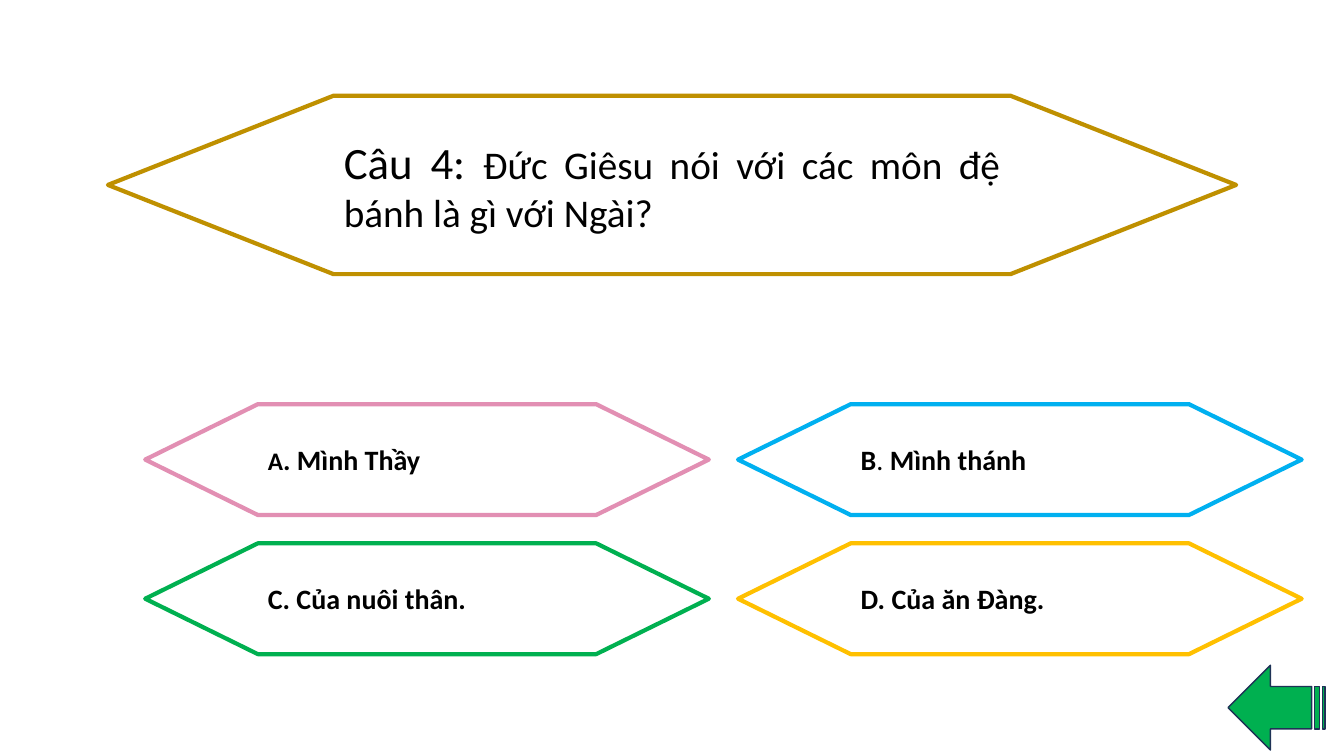
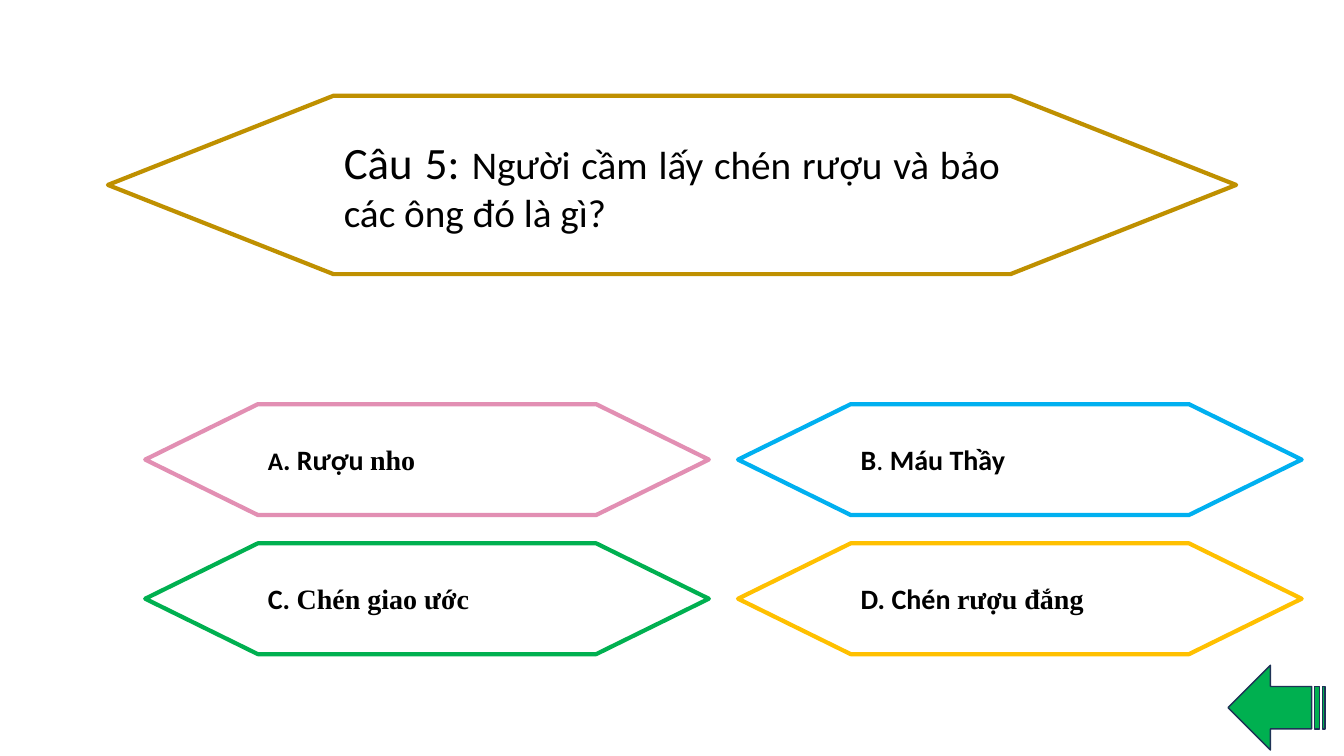
"""Build two quiz slides with a question, four answers and a back arrow."""
from pptx import Presentation
from pptx.dml.color import RGBColor
from pptx.enum import shapes, text
from pptx.util import Inches, Pt

SANS, SERIF = "Calibri", "Times New Roman"
BLACK, WHITE, GREEN, NAVY, BRONZE = "000000", "FFFFFF", "00B050", "1E3256", "BF9000"
ANSWER_COLOURS = ["E28FB3", "00B0F0", GREEN, "FFC000"]
HEXAGON = shapes.MSO_SHAPE.FLOWCHART_PREPARATION

QUIZ = [
    ("Câu 4: ", "Đức Giêsu nói với các môn đệ bánh là gì với Ngài?", [
        [("A", 18, True, SANS), (". Mình Thầy", 20, True, SANS)],
        [("B", 20, True, SANS), (". ", 20, False, SANS), ("Mình thánh", 20, True, SANS)],
        [("C. Của nuôi thân.", 20, True, SANS)],
        [("D. Của ăn Đàng.", 20, True, SANS)],
    ]),
    ("Câu 5: ", "Người cầm lấy chén rượu và bảo các ông đó là gì?", [
        [("A", 18, True, SANS), (". Rượu ", 20, True, SANS), ("nho", 20, True, SERIF)],
        [("B", 20, True, SANS), (". ", 20, False, SANS), ("Máu Thầy", 20, True, SANS)],
        [("C. ", 20, True, SANS), ("Chén giao ước", 20, True, SERIF)],
        [("D. Chén ", 20, True, SANS), ("rượu đắng", 20, True, SERIF)],
    ]),
]


def draw(slide, preset, box, line, width, fill=None):
    shape = slide.shapes.add_shape(preset, *map(Inches, box))
    shape.shadow.inherit = False
    shape.line.color.rgb = RGBColor.from_string(line)
    shape.line.width = Pt(width)
    if fill:
        shape.fill.solid()
        shape.fill.fore_color.rgb = RGBColor.from_string(fill)
    else:
        shape.fill.background()
    return shape


def write(frame, runs):
    frame.word_wrap = True
    frame.auto_size = text.MSO_AUTO_SIZE.NONE
    frame.vertical_anchor = text.MSO_ANCHOR.MIDDLE
    paragraph = frame.paragraphs[0]
    paragraph.alignment = text.PP_ALIGN.JUSTIFY
    paragraph.line_spacing = 1.0
    for words, size, bold, font in runs:
        run = paragraph.add_run()
        run.text = words
        run.font.size = Pt(size)
        run.font.bold = bold
        run.font.name = font
        run.font.color.rgb = RGBColor.from_string(BLACK)


prs = Presentation()
prs.slide_width, prs.slide_height = Inches(13.33), Inches(7.5)

for number, question, answers in QUIZ:
    slide = prs.slides.add_slide(prs.slide_layouts[5])
    draw(slide, HEXAGON, (1.07, 0.95, 11.19, 1.77), BRONZE, 3)
    title = slide.shapes.title
    title.left, title.top = Inches(3.31), Inches(0.95)
    title.width, title.height = Inches(6.71), Inches(1.77)
    write(title.text_frame, [(number, 32, False, SANS), (question, 28, False, SANS)])

    for index, (runs, colour) in enumerate(zip(answers, ANSWER_COLOURS)):
        row, column = divmod(index, 2)
        box = (1.44 + 5.88 * column, 4.01 + 1.38 * row, 5.59, 1.1)
        answer = draw(slide, HEXAGON, box, colour, 3, WHITE if index == 3 else None)
        write(answer.text_frame, runs)

    back_arrow = draw(slide, shapes.MSO_SHAPE.STRIPED_RIGHT_ARROW,
                      (12.18, 6.6, 0.96, 0.84), NAVY, 1, GREEN)
    back_arrow.rotation = 180

prs.save("out.pptx")
